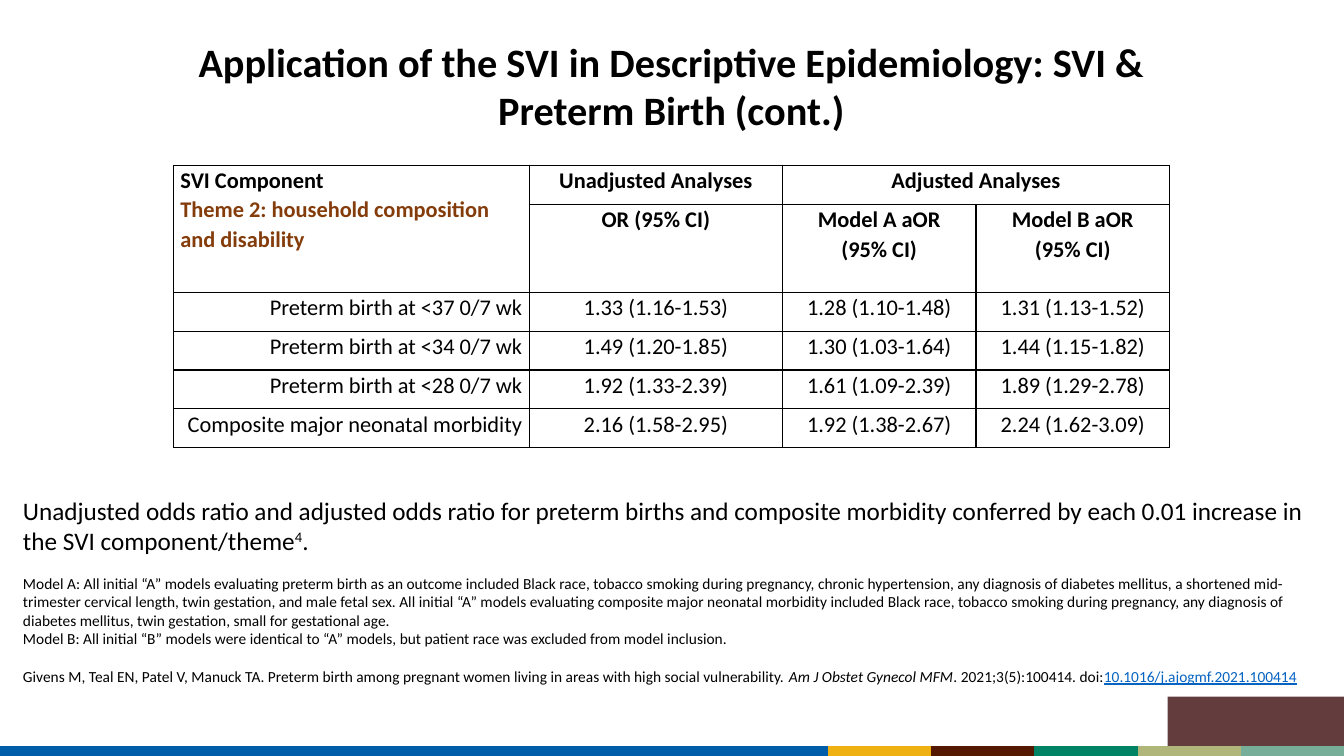
from dataclasses import dataclass

from lxml.etree import SubElement
from pptx import Presentation
from pptx.dml.color import RGBColor
from pptx.enum.shapes import MSO_CONNECTOR, MSO_SHAPE
from pptx.enum.text import MSO_ANCHOR, MSO_AUTO_SIZE, PP_ALIGN
from pptx.oxml import parse_xml
from pptx.oxml.ns import nsdecls, qn
from pptx.util import Inches, Pt


@dataclass(frozen=True)
class Theme:
    """Colours and type sizes of the slide."""
    font: str = "Calibri"
    text: str = "000000"
    accent: str = "843C0B"
    link: str = "0563C1"
    corner: str = "633D3D"
    stripe: tuple = ("005DAA", "EEB111", "541900", "008265", "B0B579", "76AE99")
    title_size: float = 28.8
    table_size: float = 16
    summary_size: float = 18
    note_size: float = 11
    stripe_width: float = 7.5


THEME = Theme()
COLUMN_WIDTHS = (3.53, 2.51, 1.92, 1.92)
ROW_HEIGHTS = (0.39, 0.87) + (0.385,) * 4
HEADER = {
    (0, 0): "SVI Component\nTheme 2: household composition and disability",
    (0, 1): "Unadjusted Analyses",
    (0, 2): "Adjusted Analyses",
    (1, 1): "OR (95% CI)",
    (1, 2): "Model A aOR\n(95% CI)",
    (1, 3): "Model B aOR\n(95% CI)",
}
RESULTS = (
    ("Preterm birth at <37 0/7 wk", "1.33 (1.16-1.53)", "1.28 (1.10-1.48)", "1.31 (1.13-1.52)"),
    ("Preterm birth at <34 0/7 wk", "1.49 (1.20-1.85)", "1.30 (1.03-1.64)", "1.44 (1.15-1.82)"),
    ("Preterm birth at <28 0/7 wk", "1.92 (1.33-2.39)", "1.61 (1.09-2.39)", "1.89 (1.29-2.78)"),
    ("Composite major neonatal morbidity", "2.16 (1.58-2.95)", "1.92 (1.38-2.67)",
     "2.24 (1.62-3.09)"),
)
SUMMARY = ("Unadjusted odds ratio and adjusted odds ratio for preterm births and composite "
           "morbidity conferred by each 0.01 increase in the SVI component/theme")
MODEL_A = ("Model A: All initial “A” models evaluating preterm birth as an outcome included Black "
           "race, tobacco smoking during pregnancy, chronic hypertension, any diagnosis of diabetes "
           "mellitus, a shortened mid-trimester cervical length, twin gestation, and male fetal sex. "
           "All initial “A” models evaluating composite major neonatal morbidity included Black "
           "race, tobacco smoking during pregnancy, any diagnosis of diabetes mellitus, twin "
           "gestation, small for gestational age.")
MODEL_B = ("Model B: All initial “B” models were identical to “A” models, but patient race was "
           "excluded from model inclusion.")
AUTHORS = ("Givens M, Teal EN, Patel V, Manuck TA. Preterm birth among pregnant women living in "
           "areas with high social vulnerability. ")


def format_run(run, size, color=THEME.text, bold=False):
    """Apply the theme font to a run."""
    run.font.name = THEME.font
    run.font.size = Pt(size)
    run.font.bold = bold
    run.font.color.rgb = RGBColor.from_string(color)


def add_run(paragraph, text, size, color=THEME.text):
    """Append a formatted run and return it."""
    run = paragraph.add_run()
    run.text = text
    format_run(run, size, color)
    return run


def add_title(slide, text):
    """Place and format the title placeholder."""
    title = slide.shapes.title
    title.left, title.top = Inches(1.72), Inches(0.31)
    title.width, title.height = Inches(9.88), Inches(1.08)
    frame = title.text_frame
    frame.text = text
    frame.word_wrap = True
    frame.auto_size = MSO_AUTO_SIZE.NONE
    frame.vertical_anchor = MSO_ANCHOR.MIDDLE
    frame.paragraphs[0].alignment = PP_ALIGN.CENTER
    format_run(frame.paragraphs[0].runs[0], THEME.title_size, bold=True)


def add_stripe(slide):
    """Draw the coloured line along the bottom edge."""
    first_end, step = 8.21, 1.024
    edges = [0] + [first_end + step * index for index in range(len(THEME.stripe))]
    for color, start, end in zip(THEME.stripe, edges, edges[1:]):
        line = slide.shapes.add_connector(
            MSO_CONNECTOR.STRAIGHT, Inches(start), Inches(7.45), Inches(end), Inches(7.45))
        line.line.color.rgb = RGBColor.from_string(color)
        line.line.width = Pt(THEME.stripe_width)
        SubElement(line._element.spPr, qn("a:effectLst"))


def add_corner_block(slide):
    """Draw the plain block in the lower right corner."""
    block = slide.shapes.add_shape(
        MSO_SHAPE.RECTANGLE, Inches(11.58), Inches(6.91), Inches(1.75), Inches(0.49))
    block.shadow.inherit = False
    block.fill.solid()
    block.fill.fore_color.rgb = RGBColor.from_string(THEME.corner)
    block.line.fill.background()


def style_cell(cell):
    """Give a cell thin borders, narrow margins and no fill."""
    properties = cell._tc.get_or_add_tcPr()
    for side in ("lnL", "lnR", "lnT", "lnB"):
        properties.append(parse_xml(
            f'<a:{side} {nsdecls("a")} w="12700"><a:solidFill><a:srgbClr val="{THEME.text}"/>'
            f'</a:solidFill></a:{side}>'))
    cell.fill.background()
    cell.margin_left = cell.margin_right = Inches(0.07)
    cell.margin_top = cell.margin_bottom = 0


def fill_cell(cell, text, alignment, bold=False):
    """Write and format the text of a cell."""
    cell.text_frame.text = text
    for paragraph in cell.text_frame.paragraphs:
        paragraph.alignment = alignment
        paragraph.line_spacing = 1.07
        format_run(paragraph.runs[0], THEME.table_size, bold=bold)


def add_results_table(slide):
    """Build the table of odds ratios."""
    table = slide.shapes.add_table(
        len(ROW_HEIGHTS), len(COLUMN_WIDTHS), Inches(1.72), Inches(1.64),
        Inches(sum(COLUMN_WIDTHS)), Inches(sum(ROW_HEIGHTS))).table
    table.first_row = table.horz_banding = False
    for column, width in zip(table.columns, COLUMN_WIDTHS):
        column.width = Inches(width)
    for row, height in zip(table.rows, ROW_HEIGHTS):
        row.height = Inches(height)
    for cell in table.iter_cells():
        style_cell(cell)
    table.cell(0, 0).merge(table.cell(1, 0))
    table.cell(0, 2).merge(table.cell(0, 3))
    for (row, column), text in HEADER.items():
        alignment = PP_ALIGN.CENTER if column else PP_ALIGN.LEFT
        fill_cell(table.cell(row, column), text, alignment, bold=True)
    theme_name = table.cell(0, 0).text_frame.paragraphs[1].runs[0]
    theme_name.font.color.rgb = RGBColor.from_string(THEME.accent)
    for row, values in enumerate(RESULTS, start=2):
        for column, text in enumerate(values):
            alignment = PP_ALIGN.CENTER if column else PP_ALIGN.RIGHT
            fill_cell(table.cell(row, column), text, alignment)


def add_notes_text(slide):
    """Write the summary, the model notes and the citation."""
    box = slide.shapes.add_textbox(Inches(0.13), Inches(4.86), Inches(13.2), Inches(2.49))
    frame = box.text_frame
    frame.word_wrap = True
    summary = frame.paragraphs[0]
    model_a, model_b, citation = (frame.add_paragraph() for _ in range(3))
    model_a.space_before = citation.space_before = Pt(13.4)

    add_run(summary, SUMMARY, THEME.summary_size)
    reference = add_run(summary, "4", THEME.summary_size)
    reference.font._element.set("baseline", "30000")
    add_run(summary, ".", THEME.summary_size)

    add_run(model_a, MODEL_A, THEME.note_size)
    add_run(model_b, MODEL_B, THEME.note_size)

    add_run(citation, AUTHORS, THEME.note_size)
    add_run(citation, "Am J Obstet Gynecol MFM", THEME.note_size).font.italic = True
    add_run(citation, ". 2021;3(5):100414. doi:", THEME.note_size)
    doi = add_run(citation, "10.1016/j.ajogmf.2021.100414", THEME.note_size, THEME.link)
    doi.font.underline = True


def main():
    """Build and save the slide."""
    presentation = Presentation()
    presentation.slide_width, presentation.slide_height = Inches(13.33), Inches(7.5)
    slide = presentation.slides.add_slide(presentation.slide_layouts.get_by_name("Title Only"))
    add_stripe(slide)
    add_corner_block(slide)
    add_title(slide, "Application of the SVI in Descriptive Epidemiology: SVI & Preterm Birth (cont.)")
    add_results_table(slide)
    add_notes_text(slide)
    presentation.save("out.pptx")


if __name__ == "__main__":
    main()
